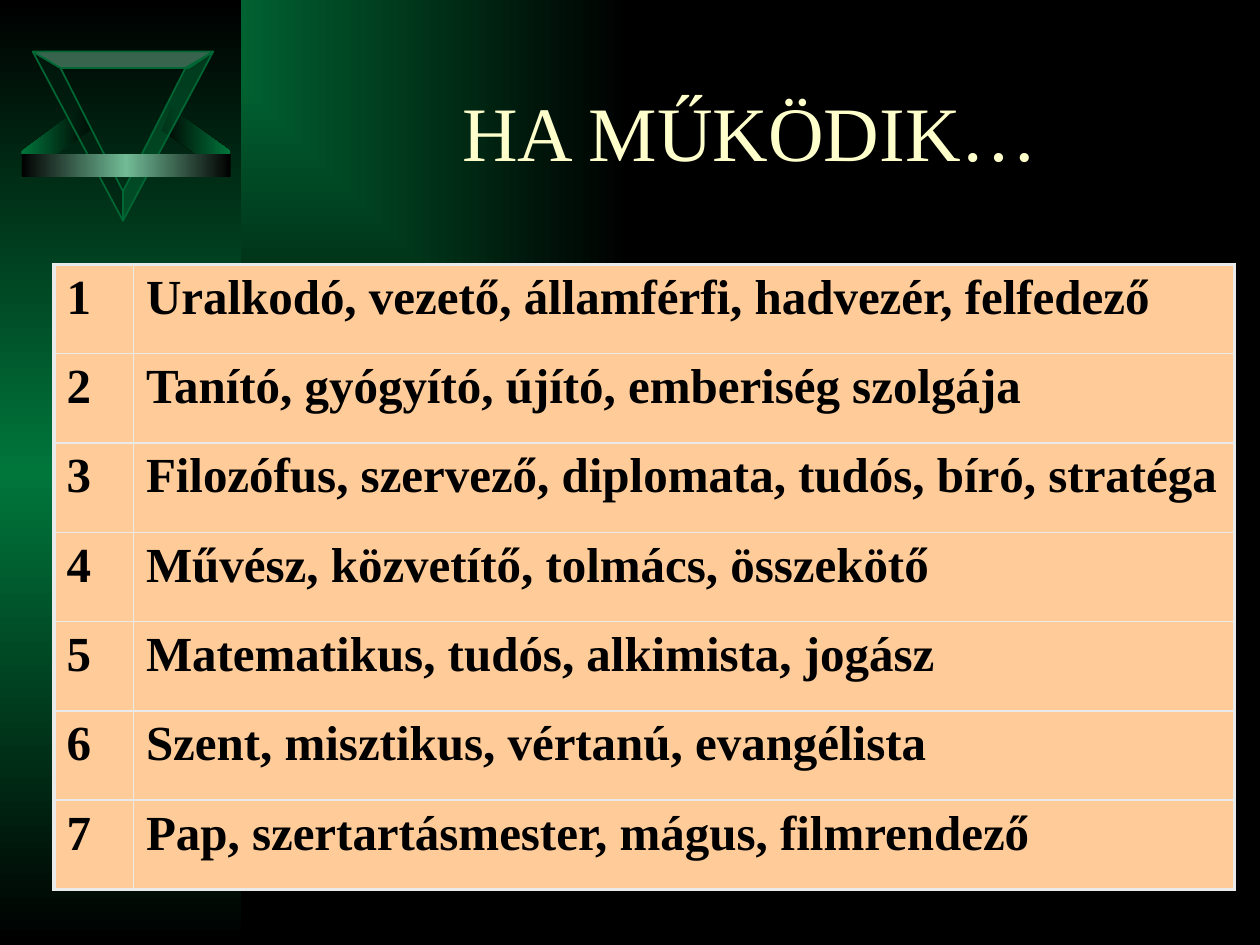
import lxml.etree
import pptx
import pptx.dml.color
import pptx.enum.shapes
import pptx.enum.text
import pptx.oxml
import pptx.oxml.ns
import pptx.util

Cm, Pt = pptx.util.Cm, pptx.util.Pt
RGB = pptx.dml.color.RGBColor.from_string
qn = pptx.oxml.ns.qn
NS = pptx.oxml.ns.nsdecls("a")
RECT = pptx.enum.shapes.MSO_SHAPE.RECTANGLE

THEME = {
    "font": "Times New Roman", "title_size": 44, "cell_size": 28,
    "title": "FFFFCC", "cell_text": "000000", "cell": "FFCC99", "border": "EAEAEA",
    "black": "000000", "green": "00763B", "light": "71BB96",
    "edge": "006633", "shade": "002010",
}
TITLE = "HA MŰKÖDIK…"
ROWS = [
    "Uralkodó, vezető, államférfi, hadvezér, felfedező",
    "Tanító, gyógyító, újító, emberiség szolgája",
    "Filozófus, szervező, diplomata, tudós, bíró, stratéga",
    "Művész, közvetítő, tolmács, összekötő",
    "Matematikus, tudós, alkimista, jogász",
    "Szent, misztikus, vértanú, evangélista",
    "Pap, szertartásmester, mágus, filmrendező",
]
# Lengths in cm
SLIDE = (25.4, 19.05)
SIDEBAR = (0, 0, 4.87, 19.05)
BAR = (0.43, 3.1, 4.22, 0.48)
TITLE_BOX = (5.28, 0.64, 19.69, 4.01)
TABLE_AT = (1.09, 5.33)
COLUMNS = (1.6, 22.2)
ROW_HEIGHT = 1.8
OUTER, INNER = 2.25, 1
LEFT_WING = [(0.43, 3.05), (0.43, 3.58), (1.83, 2.62), (1.83, 2.67), (1.63, 2.18)]
LEFT_SIDE = [(2.48, 4.45), (2.48, 3.86), (1.22, 1.37), (0.66, 1.04)]
TOP_SIDE = [(0.66, 1.04), (1.22, 1.37), (3.81, 1.37), (4.3, 1.04)]
WING_AXIS, TRIANGLE_AXIS = 2.54, 2.48


def mirror(points, axis):
    return [(2 * axis - x, y) for x, y in points]


def gradient(colors, direction):
    """Gradient fill element with evenly spaced colours."""
    step = 100000 // (len(colors) - 1)
    stops = "".join(f'<a:gs pos="{i * step}"><a:srgbClr val="{THEME[c]}"/></a:gs>'
                    for i, c in enumerate(colors))
    return pptx.oxml.parse_xml(
        f'<a:gradFill {NS} rotWithShape="1"><a:gsLst>{stops}</a:gsLst>{direction}</a:gradFill>')


def linear(degrees):
    return f'<a:lin ang="{degrees * 60000}" scaled="0"/>'


def set_gradient(fill, parent, colors, direction):
    """Swap a temporary solid fill for a gradient."""
    fill.solid()
    solid = parent.find(".//" + qn("a:solidFill"))
    solid.getparent().replace(solid, gradient(colors, direction))


def gradient_shape(sp, colors, degrees):
    sp.shadow.inherit = False
    sp.line.fill.background()
    set_gradient(sp.fill, sp.element.spPr, colors, linear(degrees))


def polygon(shapes, points):
    pts = [(Cm(x), Cm(y)) for x, y in points]
    builder = shapes.build_freeform(*pts[0])
    builder.add_line_segments(pts[1:], close=True)
    return builder.convert_to_shape()


def glass(sp, color):
    """Half-transparent fill with a thin green edge."""
    sp.shadow.inherit = False
    sp.fill.solid()
    sp.fill.fore_color.rgb = RGB(THEME[color])
    clr = sp.element.spPr.find(qn("a:solidFill"))[0]
    lxml.etree.SubElement(clr, qn("a:alpha"), val="50000")
    sp.line.color.rgb = RGB(THEME["edge"])
    sp.line.width = Pt(1)


def write(tf, text, color, **format_values):
    p = tf.paragraphs[0]
    r = p.add_run()
    r.text = text
    for name, value in format_values.items():
        setattr(r.font, name, value)
    r.font.name = THEME["font"]
    r.font.color.rgb = RGB(THEME[color])
    return p


def set_borders(cell, widths):
    tcPr = cell._tc.get_or_add_tcPr()
    for i, (side, width) in enumerate(widths.items()):
        tcPr.insert(i, pptx.oxml.parse_xml(
            f'<a:ln{side} {NS} w="{Pt(width)}"><a:solidFill>'
            f'<a:srgbClr val="{THEME["border"]}"/></a:solidFill></a:ln{side}>'))


def add_emblem(s):
    shapes = s.shapes.add_group_shape().shapes
    gradient_shape(polygon(shapes, mirror(LEFT_WING, WING_AXIS)), ("black", "green"), 0)
    gradient_shape(polygon(shapes, LEFT_WING), ("green", "black"), 0)
    for points, color in ((LEFT_SIDE, "shade"), (TOP_SIDE, "light"),
                          (mirror(LEFT_SIDE, TRIANGLE_AXIS), "edge")):
        glass(polygon(shapes, points), color)
    gradient_shape(shapes.add_shape(RECT, *map(Cm, BAR)), ("black", "light", "black"), 0)


def add_title(s):
    tf = s.shapes.add_textbox(*map(Cm, TITLE_BOX)).text_frame
    tf.word_wrap = True
    tf.vertical_anchor = pptx.enum.text.MSO_ANCHOR.MIDDLE
    p = write(tf, TITLE, "title", size=Pt(THEME["title_size"]))
    p.alignment = pptx.enum.text.PP_ALIGN.CENTER


def add_table(s):
    size = (sum(COLUMNS), ROW_HEIGHT * len(ROWS))
    table = s.shapes.add_table(len(ROWS), len(COLUMNS), *map(Cm, TABLE_AT + size)).table
    table.first_row = table.horz_banding = False
    for column, width in zip(table.columns, COLUMNS):
        column.width = Cm(width)
    last_row, last_col = len(ROWS) - 1, len(COLUMNS) - 1
    for i, text in enumerate(ROWS):
        table.rows[i].height = Cm(ROW_HEIGHT)
        for j, value in enumerate((str(i + 1), text)):
            cell = table.cell(i, j)
            cell.fill.solid()
            cell.fill.fore_color.rgb = RGB(THEME["cell"])
            on_edge = {"L": j == 0, "R": j == last_col, "T": i == 0, "B": i == last_row}
            set_borders(cell, {k: OUTER if e else INNER for k, e in on_edge.items()})
            write(cell.text_frame, value, "cell_text", size=Pt(THEME["cell_size"]), bold=True)


def main():
    prs = pptx.Presentation()
    prs.slide_width, prs.slide_height = map(Cm, SLIDE)
    s = prs.slides.add_slide(prs.slide_layouts[6])
    corner = '<a:path path="rect"><a:fillToRect r="100000" b="100000"/></a:path>'
    set_gradient(s.background.fill, s.element, ("green", "black"), corner)
    sidebar = s.shapes.add_shape(RECT, *map(Cm, SIDEBAR))
    gradient_shape(sidebar, ("black", "green", "black"), 90)
    add_emblem(s)
    add_title(s)
    add_table(s)
    prs.save("out.pptx")


if __name__ == "__main__":
    main()
